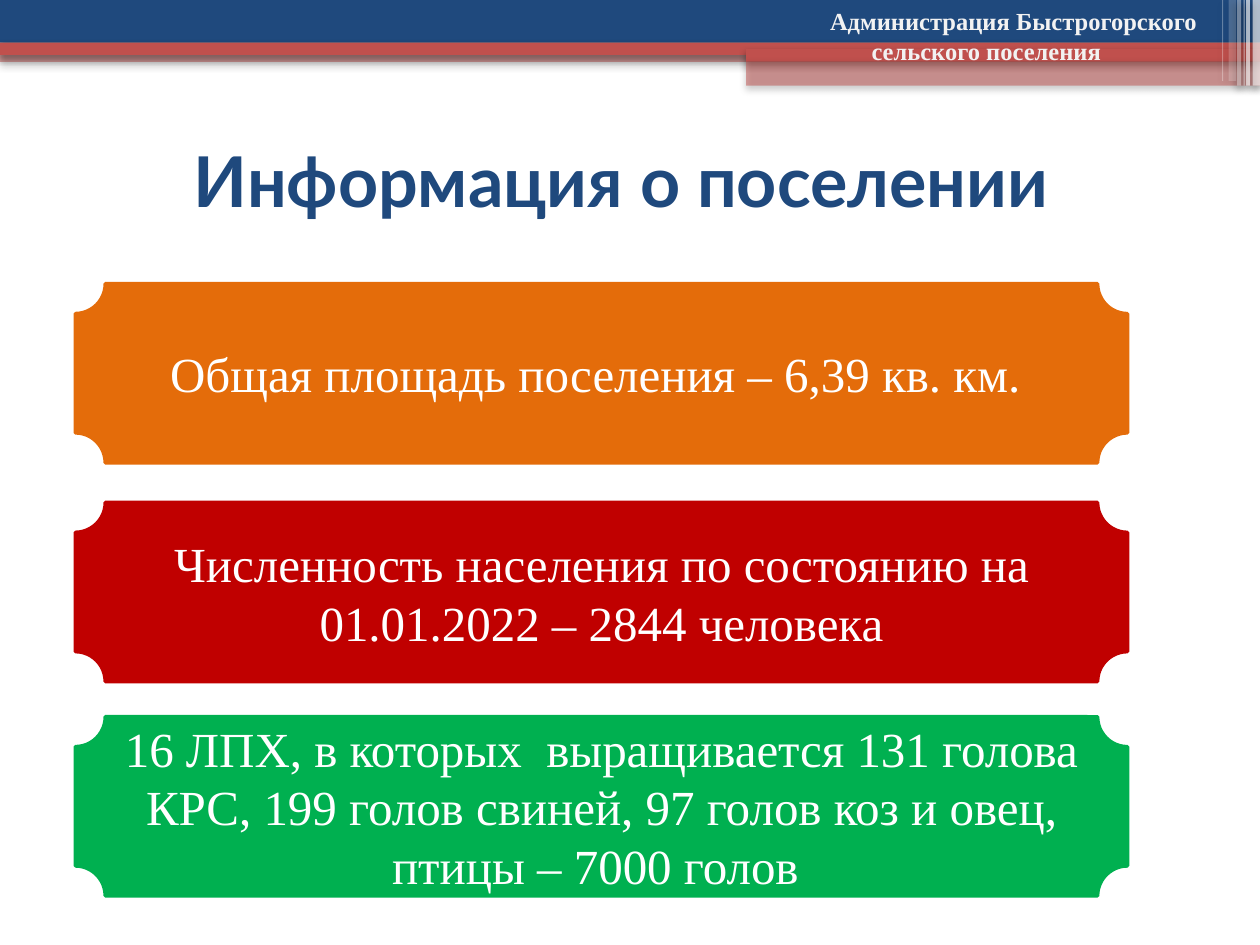
from lxml import etree
from pptx import Presentation
from pptx import util as u
from pptx.dml.color import RGBColor
from pptx.enum import shapes, text
from pptx.oxml import ns

NAVY = RGBColor(0x1F, 0x49, 0x7D)
BRICK = RGBColor(0xC0, 0x50, 0x4D)
ORANGE = RGBColor(0xE4, 0x6C, 0x0A)
RED = RGBColor(0xC0, 0x00, 0x00)
GREEN = RGBColor(0x00, 0xB0, 0x50)
WHITE = RGBColor(0xFF, 0xFF, 0xFF)
PALE = RGBColor(0xF2, 0xF2, 0xF2)
BLACK = RGBColor(0x00, 0x00, 0x00)

HEADING_FONT = "Lato"
BODY_FONT = "Times New Roman"
SLIDE_WIDTH, SLIDE_HEIGHT = 25.4, 19.05


def add_element(parent, tag, **attributes):
    """Append a drawing element with the given attributes."""
    values = {name: str(value) for name, value in attributes.items()}
    return etree.SubElement(parent, ns.qn(tag), values)


class SlideBuilder:
    """Holds the style and the current slide."""

    def __init__(self, slide):
        self.slide = slide

    def add_preset(self, preset, box, color):
        shape = self.slide.shapes.add_shape(preset, *map(u.Cm, box))
        shape.shadow.inherit = False
        shape.fill.solid()
        shape.fill.fore_color.rgb = color
        return shape

    def bar(self, box, color, opacity=100):
        """Borderless bar with a soft shadow below it."""
        shape = self.add_preset(shapes.MSO_SHAPE.RECTANGLE, box, color)
        shape.line.fill.background()
        properties = shape._element.spPr
        if opacity < 100:
            fill_color = properties.find(".//" + ns.qn("a:srgbClr"))
            add_element(fill_color, "a:alpha", val=opacity * 1000)
        shadow = add_element(properties.find(ns.qn("a:effectLst")), "a:outerShdw",
                             blurRad=u.Pt(4.1), dist=u.Pt(2), dir=90 * 60000,
                             algn="ctr", rotWithShape=0)
        shadow_color = add_element(shadow, "a:srgbClr", val=BLACK)
        add_element(shadow_color, "a:alpha", val=40 * 1000)

    def add_lines(self, shape, lines, font_name, size, color, bold=False,
                  anchor=text.MSO_ANCHOR.MIDDLE):
        """Fill a shape with centred paragraphs."""
        frame = shape.text_frame
        frame.word_wrap = True
        frame.vertical_anchor = anchor
        for index, line in enumerate(lines):
            paragraph = frame.add_paragraph() if index else frame.paragraphs[0]
            paragraph.alignment = text.PP_ALIGN.CENTER
            run = paragraph.add_run()
            run.text = line
            run.font.name = font_name
            run.font.size = u.Pt(size)
            run.font.bold = bold
            run.font.color.rgb = color

    def label(self, box, lines, *style, **options):
        shape = self.slide.shapes.add_textbox(*map(u.Cm, box))
        self.add_lines(shape, lines, *style, **options)
        return shape

    def plaque(self, box, color, line):
        shape = self.add_preset(shapes.MSO_SHAPE.PLAQUE, box, color)
        shape.adjustments[0] = 0.167
        shape.line.color.rgb = color
        shape.line.width = u.Pt(2)
        self.add_lines(shape, [line], BODY_FONT, 28, WHITE)


def main():
    presentation = Presentation()
    presentation.slide_width = u.Cm(SLIDE_WIDTH)
    presentation.slide_height = u.Cm(SLIDE_HEIGHT)
    builder = SlideBuilder(presentation.slides.add_slide(presentation.slide_layouts[6]))

    # Header bands: left, top, height, colour, opacity; all reach the right edge
    for left, top, height, color, opacity in (
        (0, 1.02, 0.23, BRICK, 50),
        (0, 0, 0.86, NAVY, 100),
        (0, 0.86, 0.25, BRICK, 100),
        (15.04, 0.99, 0.25, BRICK, 100),
        (15.04, 1.22, 0.51, BRICK, 50),
    ):
        builder.bar((left, top, SLIDE_WIDTH - left, height), color, opacity)

    # Light stripes at the right end: left, width, height, opacity
    for left, width, height, opacity in (
        (25.25, 0.15, 1.73, 66),
        (25.12, 0.08, 1.73, 66),
        (25.07, 0.02, 1.73, 60),
        (24.94, 0.08, 1.73, 40),
        (24.77, 0.15, 1.63, 20),
        (24.64, 0.02, 1.63, 31),
    ):
        builder.bar((left, 0, width, height), WHITE, opacity)

    # Title
    builder.label((1.09, 2.13, 22.86, 2.97), ["Информация о поселении"],
                  HEADING_FONT, 40, NAVY, bold=True)

    # Facts about the settlement
    for top, color, line in (
        (5.72, ORANGE, "Общая площадь поселения – 6,39 кв. км. "),
        (10.13, RED, "Численность населения по состоянию на 01.01.2022 – 2844 человека"),
        (14.45, GREEN, "16 ЛПХ, в которых  выращивается 131 голова КРС, "
                       "199 голов свиней, 97 голов коз и овец, птицы – 7000 голов "),
    ):
        builder.plaque((1.52, top, 21.21, 3.61), color, line)

    # Administration name, first line shifted to the right
    header = builder.label((14.88, 0, 10.01, 1.42),
                           ["Администрация Быстрогорского", "сельского поселения"],
                           BODY_FONT, 14, PALE, bold=True, anchor=text.MSO_ANCHOR.TOP)
    first_line = header.text_frame.paragraphs[0]._p.get_or_add_pPr()
    first_line.set("marL", str(u.Cm(1.1)))

    presentation.save("out.pptx")


if __name__ == "__main__":
    main()
